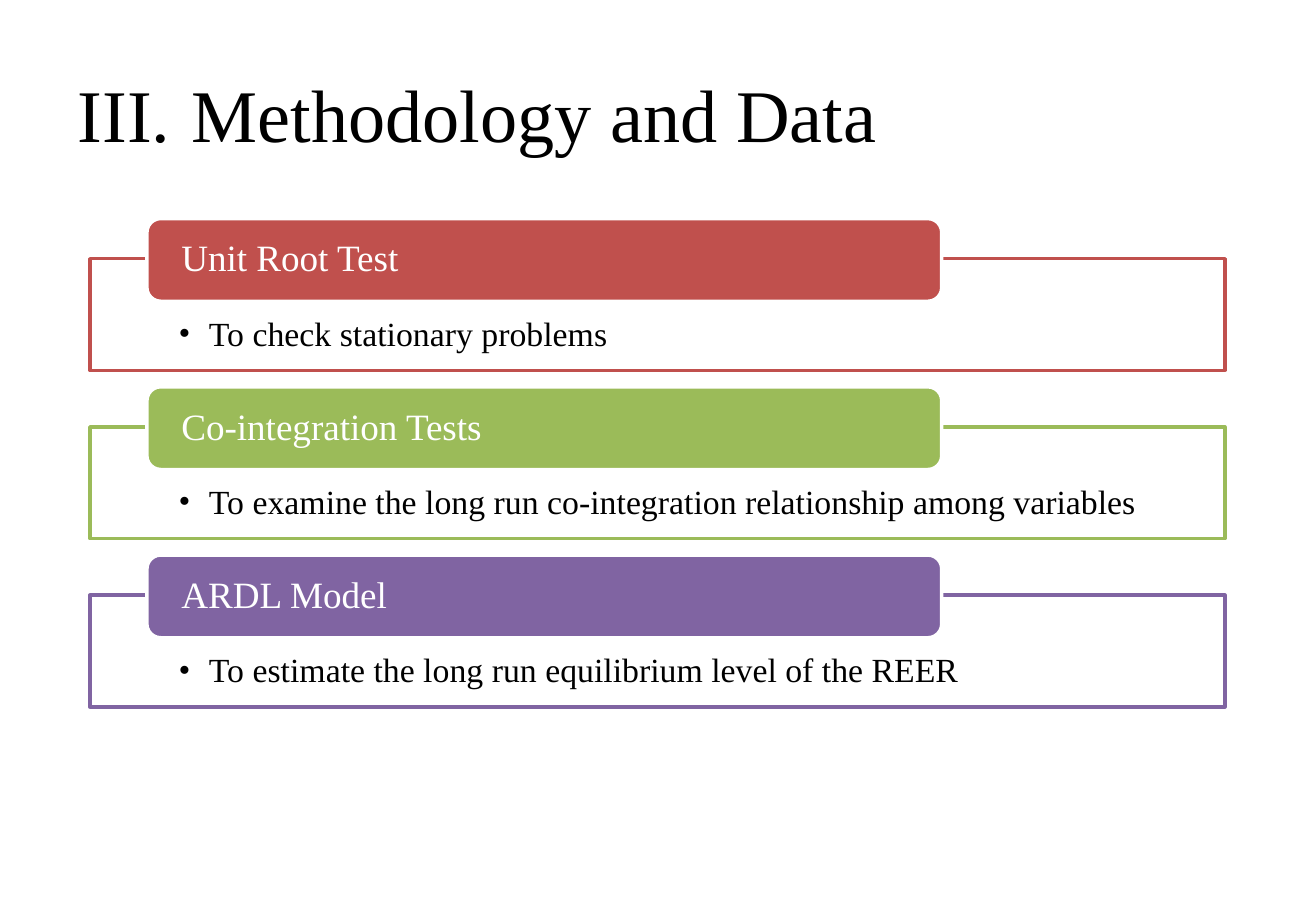
from dataclasses import dataclass

from lxml import etree
from pptx import Presentation
from pptx.dml.color import RGBColor
from pptx.enum.shapes import MSO_SHAPE
from pptx.enum.text import MSO_ANCHOR, PP_ALIGN
from pptx.oxml.ns import qn
from pptx.util import Inches, Pt

RECTANGLE = MSO_SHAPE.RECTANGLE
ROUNDED = MSO_SHAPE.ROUNDED_RECTANGLE
TOP, MIDDLE = MSO_ANCHOR.TOP, MSO_ANCHOR.MIDDLE
LEFT = PP_ALIGN.LEFT


@dataclass(frozen=True)
class Theme:
    font: str = "Times New Roman"
    black: str = "000000"
    white: str = "FFFFFF"
    accents: tuple = ("C0504D", "9BBB59", "8064A2")
    title_size: int = 44
    heading_size: int = 22
    detail_size: int = 20
    line_width: int = 2
    panel_opacity: int = 90


THEME = Theme()
METHODS = (
    ("Unit Root Test", "To check stationary problems"),
    ("Co-integration Tests",
     "To examine the long run co-integration relationship among variables"),
    ("ARDL Model", "To estimate the long run equilibrium level of the REER"),
)
FIRST_TOP = 1.8
LAST_TOP = 4.57
PANEL_DROP = 0.33


def write_text(shape, text, *, size, color, anchor=MIDDLE, insets=(0.1, 0.05, 0.1, 0.05),
               indent=0, bullet=None, line_spacing=1.0):
    frame = shape.text_frame
    frame.word_wrap = True
    frame.vertical_anchor = anchor
    (frame.margin_left, frame.margin_top,
     frame.margin_right, frame.margin_bottom) = map(Inches, insets)
    paragraph = frame.paragraphs[0]
    if bullet:
        tag, attributes = bullet
        properties = paragraph._p.get_or_add_pPr()
        properties.set("marL", str(Inches(indent)))
        properties.set("indent", str(-Inches(indent)))
        etree.SubElement(properties, qn("a:buFont"), typeface=THEME.font)
        etree.SubElement(properties, qn(tag), attributes)
    paragraph.alignment = LEFT
    paragraph.line_spacing = line_spacing
    run = paragraph.add_run()
    run.text = text
    run.font.name = THEME.font
    run.font.size = Pt(size)
    run.font.color.rgb = RGBColor.from_string(color)


class MethodSlide:
    def __init__(self, presentation, theme):
        self.theme = theme
        self.slide = presentation.slides.add_slide(presentation.slide_layouts[6])

    def title(self, text, box):
        shape = self.slide.shapes.add_textbox(*map(Inches, box))
        write_text(shape, text, size=self.theme.title_size, color=self.theme.black, indent=0.94,
                   bullet=("a:buAutoNum", {"type": "romanUcPeriod", "startAt": "3"}))

    def block(self, kind, box, fill, line):
        shape = self.slide.shapes.add_shape(kind, *map(Inches, box))
        shape.shadow.inherit = False
        shape.fill.solid()
        shape.fill.fore_color.rgb = RGBColor.from_string(fill)
        shape.line.color.rgb = RGBColor.from_string(line)
        shape.line.width = Pt(self.theme.line_width)
        return shape

    def panel(self, text, top, color):
        shape = self.block(RECTANGLE, (0.74, top, 9.34, 0.92), self.theme.white, color)
        fill_color = shape._element.spPr.find(qn("a:solidFill"))[0]
        etree.SubElement(fill_color, qn("a:alpha"), val=str(self.theme.panel_opacity * 1000))
        write_text(shape, text, size=self.theme.detail_size, color=self.theme.black, anchor=TOP,
                   insets=(0.73, 0.48, 0.4, 0.16), indent=0.25,
                   bullet=("a:buChar", {"char": "•"}), line_spacing=0.9)

    def heading(self, text, top, color):
        shape = self.block(ROUNDED, (1.21, top, 6.54, 0.68), color, self.theme.white)
        write_text(shape, text, size=self.theme.heading_size, color=self.theme.white,
                   insets=(0.25, 0, 0.25, 0), line_spacing=0.9)


def main():
    presentation = Presentation()
    presentation.slide_width = Inches(10.83)
    presentation.slide_height = Inches(7.5)
    slide = MethodSlide(presentation, THEME)
    slide.title("Methodology and Data", (0.54, 0.3, 9.75, 1.25))
    pitch = (LAST_TOP - FIRST_TOP) / (len(METHODS) - 1)
    for index, ((heading, detail), color) in enumerate(zip(METHODS, THEME.accents)):
        top = FIRST_TOP + index * pitch
        slide.panel(detail, top + PANEL_DROP, color)
        slide.heading(heading, top, color)
    presentation.save("out.pptx")


if __name__ == "__main__":
    main()
